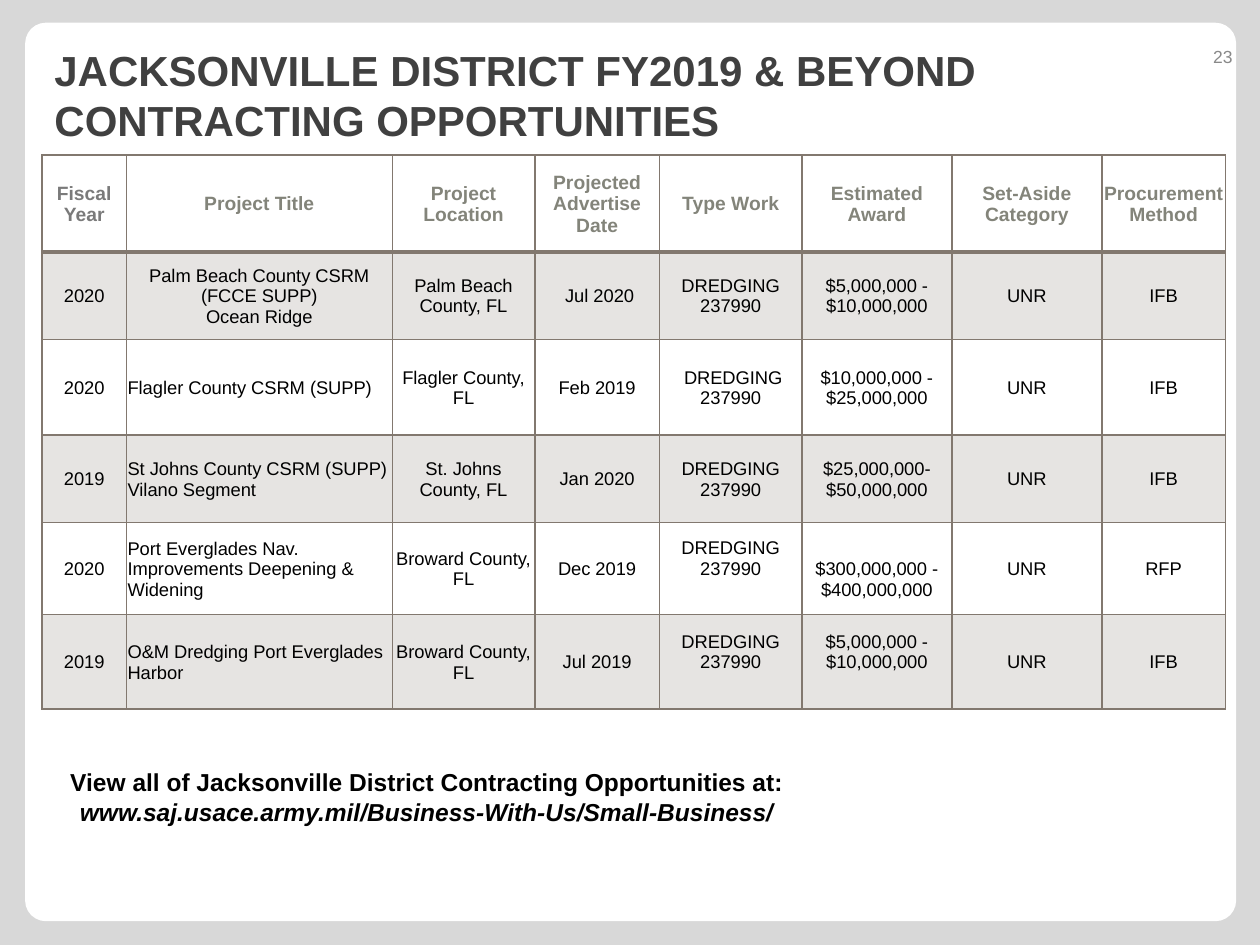
import dataclasses

import pptx
import pptx.dml.color
import pptx.enum.shapes
import pptx.enum.text
import pptx.oxml
import pptx.oxml.ns
import pptx.util

Pt = pptx.util.Pt
Align = pptx.enum.text.PP_ALIGN
Anchor = pptx.enum.text.MSO_ANCHOR
FONT_NAME = "Arial"
TAUPE = "82786F"
HEADER_GREY = "83847A"
CELL_INSET = 0.72
BLANK_LINE = 12


@dataclasses.dataclass
class TextStyle:
    size: float
    color: str = "000000"
    bold: bool = False
    align: Align = Align.CENTER


@dataclasses.dataclass
class Cell:
    text: str
    style: TextStyle
    top_gap: float = 0
    bottom_gap: float = 0


@dataclasses.dataclass
class Project:
    year: str
    title: str
    location: str
    advertise_date: str
    work: str
    award: str
    method: str
    title_align: Align = Align.LEFT
    work_bottom_gap: float = 0
    award_top_gap: float = 0
    award_bottom_gap: float = 0

    def cells(self) -> list[Cell]:
        body = TextStyle(10.5)
        return [
            Cell(self.year, body),
            Cell(self.title, TextStyle(10.5, align=self.title_align)),
            Cell(self.location, body),
            Cell(self.advertise_date, body),
            Cell(self.work, body, bottom_gap=self.work_bottom_gap),
            Cell(self.award, body, self.award_top_gap, self.award_bottom_gap),
            Cell("UNR", body),
            Cell(self.method, body),
        ]


HEADERS = [
    "Fiscal Year", "Project Title", "Project Location", "Projected Advertise Date",
    "Type Work", "Estimated Award", "Set-Aside Category", "Procurement Method",
]
PROJECTS = [
    Project("2020", "Palm Beach County CSRM (FCCE SUPP)\nOcean Ridge", "Palm Beach County, FL",
            " Jul 2020", "DREDGING\n237990", "$5,000,000 - $10,000,000", "IFB",
            title_align=Align.CENTER),
    Project("2020", "Flagler County CSRM (SUPP)", "Flagler County, FL",
            "Feb 2019", " DREDGING 237990", "$10,000,000 - $25,000,000", "IFB"),
    Project("2019", "St Johns County CSRM (SUPP) Vilano Segment", "St. Johns County, FL",
            "Jan 2020", "DREDGING 237990", "$25,000,000- $50,000,000", "IFB"),
    Project("2020", "Port Everglades Nav. Improvements Deepening & Widening",
            "Broward County, FL", "Dec 2019", "DREDGING\n237990",
            "$300,000,000 - $400,000,000", "RFP",
            work_bottom_gap=BLANK_LINE, award_top_gap=BLANK_LINE),
    Project("2019", "O&M Dredging Port Everglades Harbor", "Broward County, FL",
            "Jul 2019", "DREDGING\n237990", "$5,000,000 - $10,000,000", "IFB",
            work_bottom_gap=BLANK_LINE, award_bottom_gap=BLANK_LINE),
]
COLUMN_WIDTHS = [48.2, 152, 81.4, 71.3, 81.4, 85.7, 85.7, 70.6]
ROW_HEIGHTS = [55.4, 50, 54.7, 50, 52.6, 54]


def rgb(color: str) -> pptx.dml.color.RGBColor:
    return pptx.dml.color.RGBColor.from_string(color)


def format_text(text_frame, style: TextStyle) -> None:
    for paragraph in text_frame.paragraphs:
        paragraph.alignment = style.align
        for run in paragraph.runs:
            run.font.name = FONT_NAME
            run.font.size = Pt(style.size)
            run.font.bold = style.bold
            run.font.color.rgb = rgb(style.color)


def add_text(slide, text: str, left: float, top: float, width: float, height: float,
             style: TextStyle, anchor: Anchor = Anchor.MIDDLE):
    text_box = slide.shapes.add_textbox(Pt(left), Pt(top), Pt(width), Pt(height))
    text_frame = text_box.text_frame
    text_frame.word_wrap = True
    text_frame.vertical_anchor = anchor
    text_frame.text = text
    format_text(text_frame, style)
    return text_frame


def add_panel(slide) -> None:
    panel = slide.shapes.add_shape(
        pptx.enum.shapes.MSO_SHAPE.ROUNDED_RECTANGLE, Pt(14.4), Pt(13), Pt(692), Pt(513.4))
    panel.adjustments[0] = 0.023
    panel.shadow.inherit = False
    panel.fill.solid()
    panel.fill.fore_color.rgb = rgb("FFFFFF")
    panel.line.fill.background()


def set_borders(table_cell, widths: dict[str, float]) -> None:
    properties = table_cell._tc.get_or_add_tcPr()
    for side, width in widths.items():
        properties.append(pptx.oxml.parse_xml(
            f'<a:{side} {pptx.oxml.ns.nsdecls("a")} w="{Pt(width)}">'
            f'<a:solidFill><a:srgbClr val="{TAUPE}"/></a:solidFill></a:{side}>'))


def set_tint(table_cell) -> None:
    table_cell.fill.solid()
    table_cell.fill.fore_color.rgb = rgb(TAUPE)
    color = table_cell._tc.tcPr.find(".//" + pptx.oxml.ns.qn("a:solidFill") + "[last()]")
    fill = table_cell._tc.tcPr.findall(pptx.oxml.ns.qn("a:solidFill"))[-1]
    fill[0].append(pptx.oxml.parse_xml(
        f'<a:alpha {pptx.oxml.ns.nsdecls("a")} val="20000"/>'))


def fill_cell(table_cell, cell: Cell, row_index: int) -> None:
    table_cell.margin_left = table_cell.margin_right = Pt(CELL_INSET)
    table_cell.margin_top = Pt(CELL_INSET + cell.top_gap)
    table_cell.margin_bottom = Pt(cell.bottom_gap)
    table_cell.vertical_anchor = Anchor.MIDDLE
    table_cell.text_frame.text = cell.text
    format_text(table_cell.text_frame, cell.style)
    set_borders(table_cell, {
        "lnL": 1, "lnR": 1,
        "lnT": 2 if row_index == 1 else 1,
        "lnB": 2 if row_index == 0 else 1,
    })
    if row_index % 2:
        set_tint(table_cell)
    else:
        table_cell.fill.background()


def add_project_table(slide) -> None:
    header = [Cell(text, TextStyle(11, HEADER_GREY if index else "7A7A7A", bold=True))
              for index, text in enumerate(HEADERS)]
    rows = [header] + [project.cells() for project in PROJECTS]
    table = slide.shapes.add_table(
        len(rows), len(HEADERS), Pt(24), Pt(88.6),
        Pt(sum(COLUMN_WIDTHS)), Pt(sum(ROW_HEIGHTS))).table
    table.first_row = table.horz_banding = False
    for column, width in zip(table.columns, COLUMN_WIDTHS):
        column.width = Pt(width)
    for row_index, (row, height) in enumerate(zip(rows, ROW_HEIGHTS)):
        table.rows[row_index].height = Pt(height)
        for column_index, cell in enumerate(row):
            fill_cell(table.cell(row_index, column_index), cell, row_index)


def main() -> None:
    presentation = pptx.Presentation()
    presentation.slide_width, presentation.slide_height = Pt(720), Pt(540)
    slide = presentation.slides.add_slide(presentation.slide_layouts[6])
    slide.background.fill.solid()
    slide.background.fill.fore_color.rgb = rgb("D8D8D8")
    add_panel(slide)
    add_text(slide, "JACKSONVILLE DISTRICT FY2019 & BEYOND CONTRACTING OPPORTUNITIES",
             24, 22, 660, 64, TextStyle(24, "404040", True, Align.LEFT))
    add_text(slide, "23", 653.8, 18, 57.6, 28.8, TextStyle(10, "898989", align=Align.RIGHT))
    add_project_table(slide)
    footer = add_text(
        slide,
        "View all of Jacksonville District Contracting Opportunities at:\n"
        "www.saj.usace.army.mil/Business-With-Us/Small-Business/",
        -16.6, 435, 521.3, 41, TextStyle(14, bold=True), Anchor.TOP)
    footer.paragraphs[1].runs[0].font.italic = True
    presentation.save("out.pptx")


if __name__ == "__main__":
    main()
